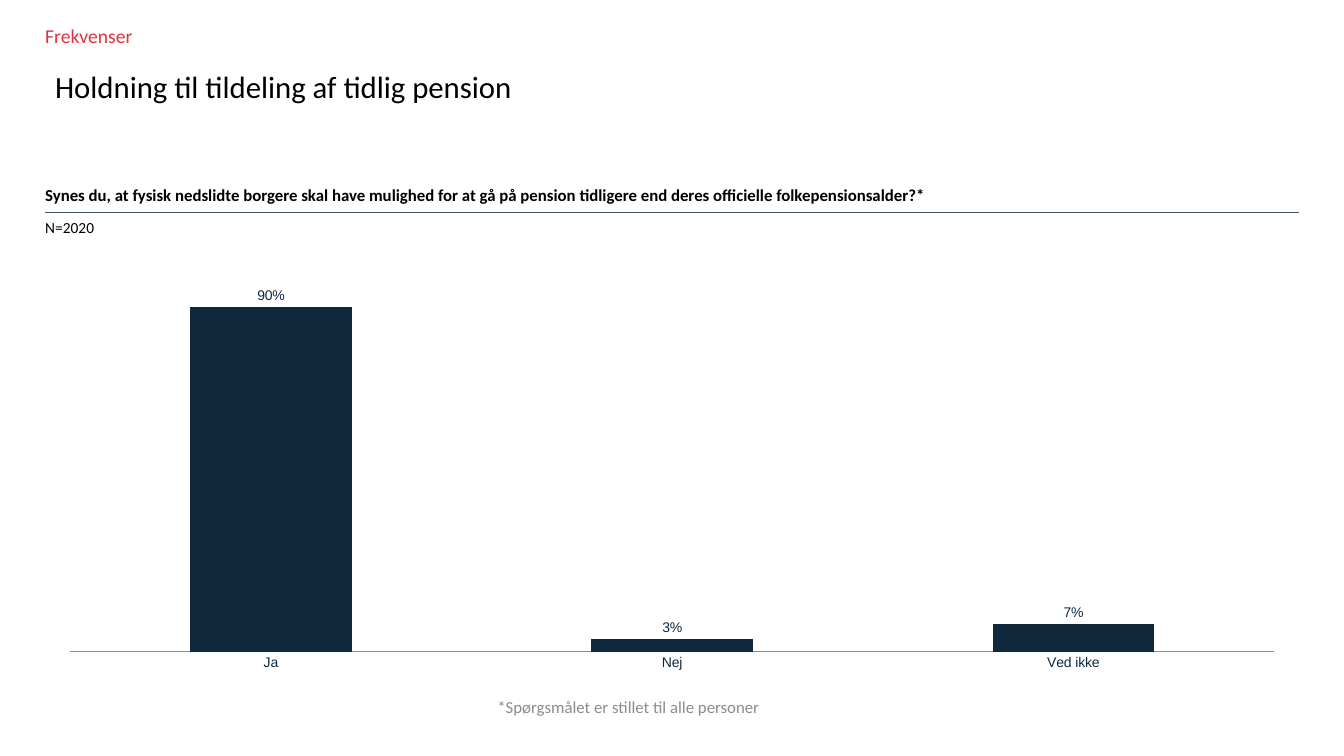
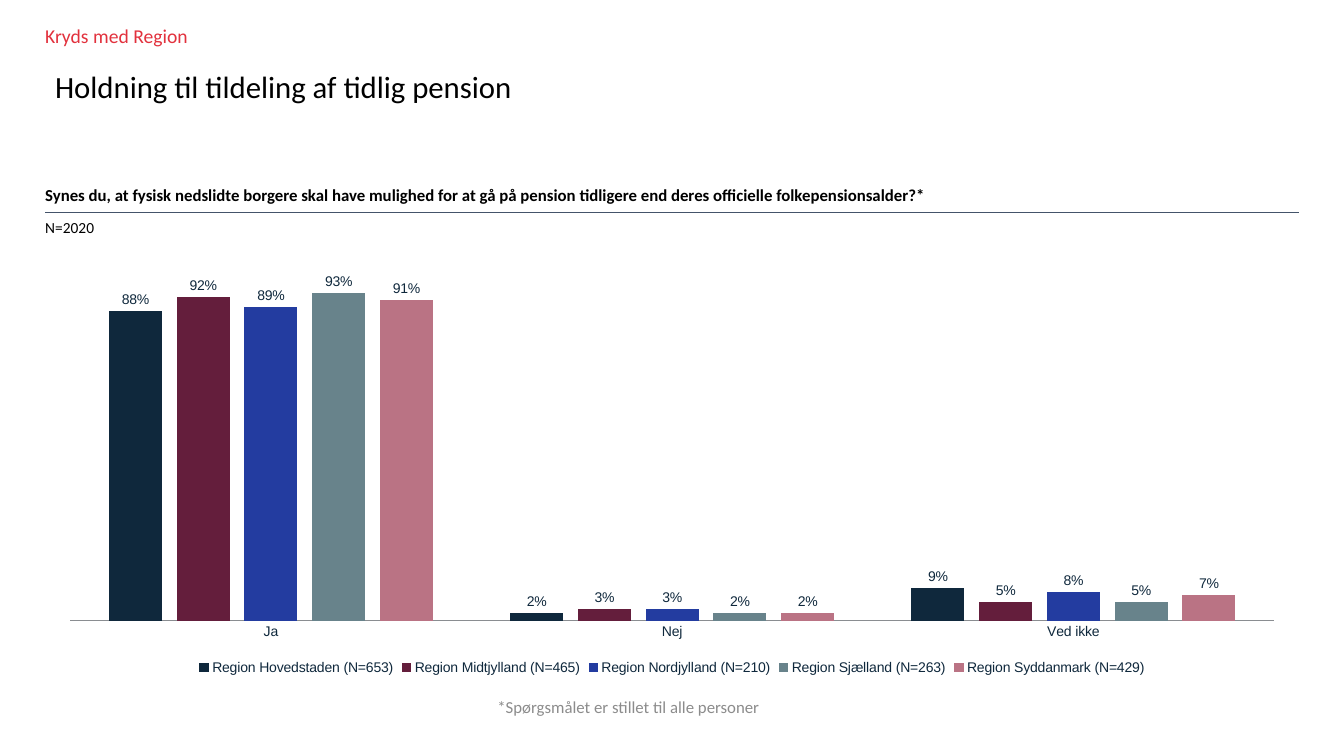
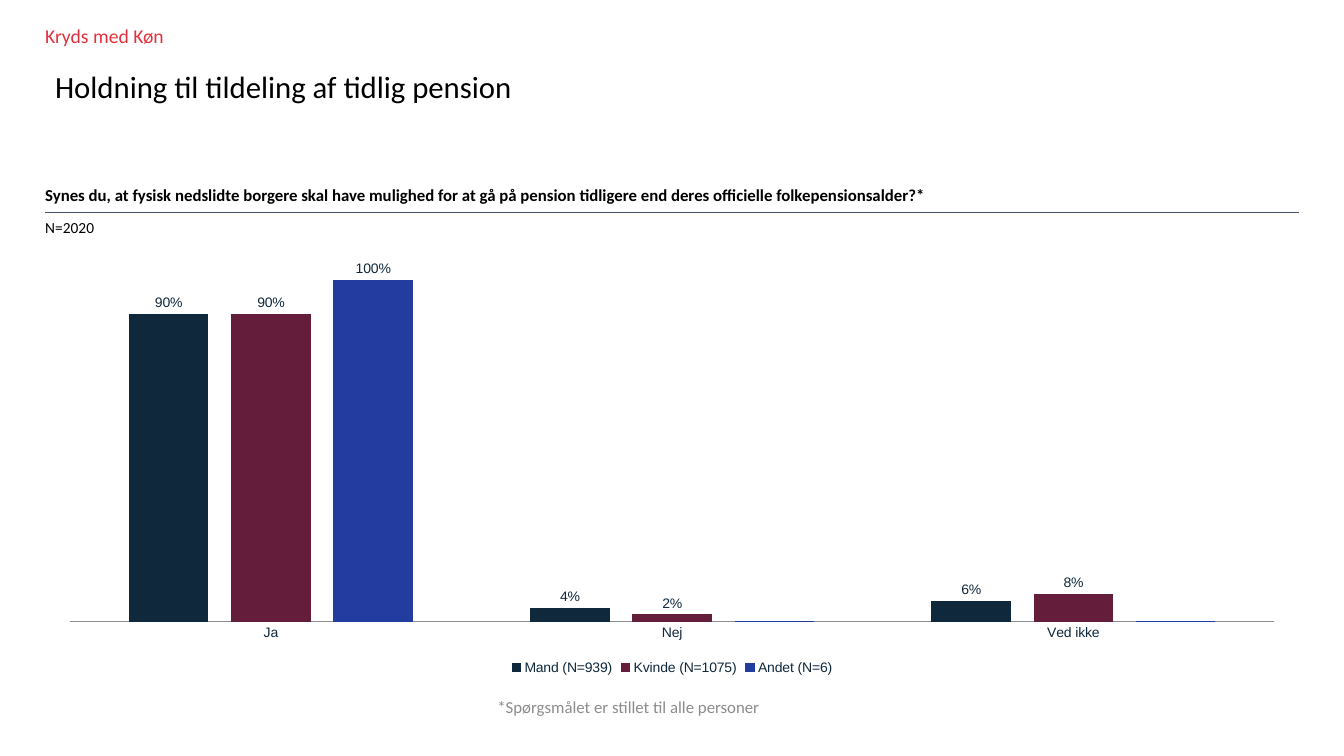
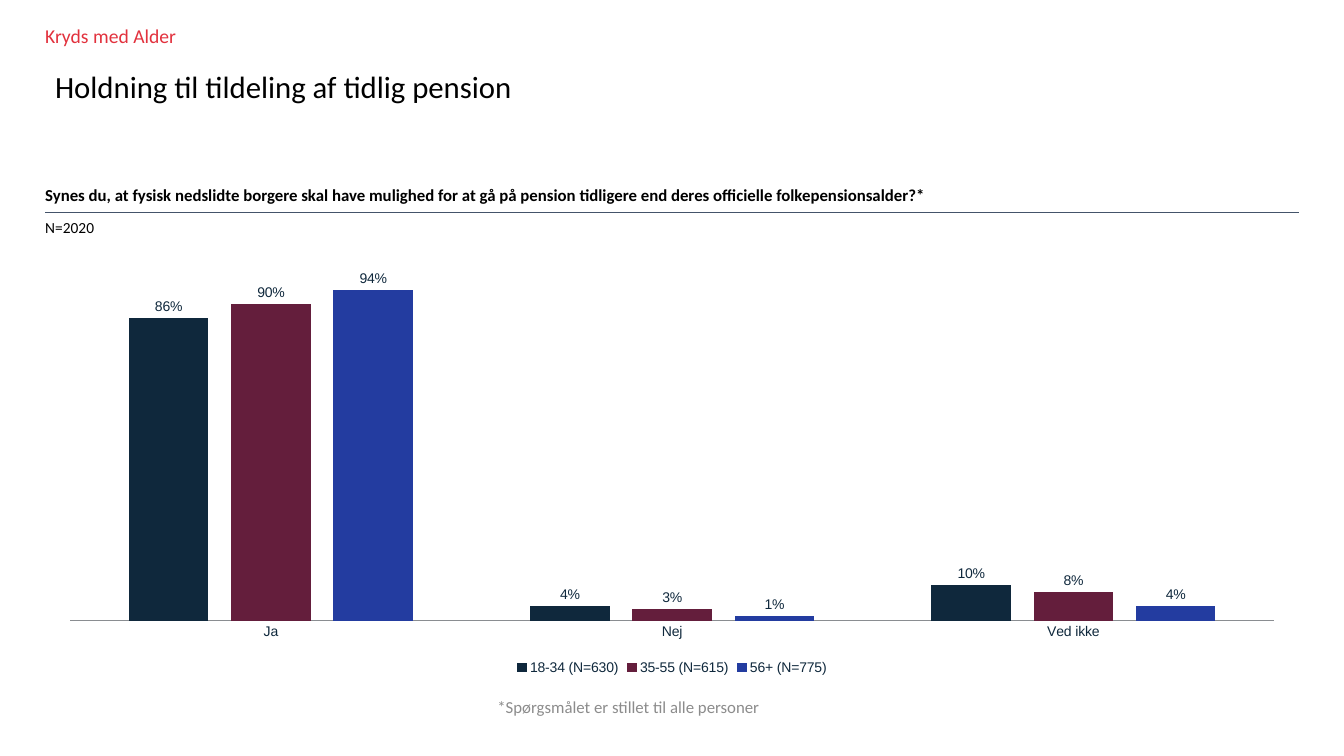
from lxml import etree
from pptx import Presentation
from pptx.chart.data import CategoryChartData
from pptx.dml.color import RGBColor
from pptx.enum.chart import XL_CHART_TYPE, XL_LABEL_POSITION, XL_LEGEND_POSITION, XL_TICK_MARK
from pptx.enum.shapes import MSO_CONNECTOR
from pptx.enum.text import MSO_ANCHOR, PP_ALIGN
from pptx.oxml.ns import qn
from pptx.util import Cm, Pt

COLUMNS = XL_CHART_TYPE.COLUMN_CLUSTERED
OUTSIDE_END = XL_LABEL_POSITION.OUTSIDE_END
LEGEND_BOTTOM = XL_LEGEND_POSITION.BOTTOM
NO_TICK = XL_TICK_MARK.NONE
STRAIGHT = MSO_CONNECTOR.STRAIGHT
TOP, MIDDLE, BOTTOM = MSO_ANCHOR.TOP, MSO_ANCHOR.MIDDLE, MSO_ANCHOR.BOTTOM
LEFT, CENTER = PP_ALIGN.LEFT, PP_ALIGN.CENTER

BLACK = RGBColor(0x00, 0x00, 0x00)
RED = RGBColor(0xE2, 0x31, 0x3D)
GRAY = RGBColor(0x8C, 0x8C, 0x8C)
AXIS_GRAY = RGBColor(0x8A, 0x8D, 0x91)
RULE_BLUE = RGBColor(0x44, 0x54, 0x6A)
NAVY = RGBColor(0x0F, 0x28, 0x3C)
WINE = RGBColor(0x64, 0x1E, 0x3C)
BLUE = RGBColor(0x23, 0x3C, 0xA0)
TEAL = RGBColor(0x68, 0x83, 0x8B)
ROSE = RGBColor(0xBA, 0x73, 0x84)
SERIES_COLORS = [NAVY, WINE, BLUE, TEAL, ROSE]

MARGIN = Cm(1.14)
CONTENT_WIDTH = Cm(31.6)
RULE_TOP = Cm(5.36)
NO_INSETS = (0, 0, 0, 0)
DEFAULT_INSETS = (Cm(0.25), Cm(0.13), Cm(0.25), Cm(0.13))

TITLE = "Holdning til tildeling af tidlig pension"
QUESTION = (
    "Synes du, at fysisk nedslidte borgere skal have mulighed for at gå på pension "
    "tidligere end deres officielle folkepensionsalder?*"
)
SAMPLE = "N=2020"
FOOTNOTE = "*Spørgsmålet er stillet til alle personer"
ANSWERS = ["Ja", "Nej", "Ved ikke"]

SLIDES = [
    ("Frekvenser", [("Series 1", (0.9, 0.03, 0.07))]),
    ("Kryds med Region", [
        ("Region Hovedstaden (N=653)", (0.88, 0.02, 0.09)),
        ("Region Midtjylland (N=465)", (0.92, 0.03, 0.05)),
        ("Region Nordjylland (N=210)", (0.89, 0.03, 0.08)),
        ("Region Sjælland (N=263)", (0.93, 0.02, 0.05)),
        ("Region Syddanmark (N=429)", (0.91, 0.02, 0.07)),
    ]),
    ("Kryds med Køn", [
        ("Mand (N=939)", (0.9, 0.04, 0.06)),
        ("Kvinde (N=1075)", (0.9, 0.02, 0.08)),
        ("Andet (N=6)", (1, 0, 0)),
    ]),
    ("Kryds med Alder", [
        ("18-34 (N=630)", (0.86, 0.04, 0.1)),
        ("35-55 (N=615)", (0.9, 0.03, 0.08)),
        ("56+ (N=775)", (0.94, 0.01, 0.04)),
    ]),
]


def style_font(font, size, color, name="Calibri", bold=False):
    font.name = name
    font.size = Pt(size)
    font.color.rgb = color
    font.bold = bold


def add_text(slide, text, box, size, color, insets=NO_INSETS, anchor=TOP,
             align=LEFT, spacing=0.9, bold=False):
    frame = slide.shapes.add_textbox(*box).text_frame
    frame.word_wrap = True
    frame.vertical_anchor = anchor
    frame.margin_left, frame.margin_top, frame.margin_right, frame.margin_bottom = insets
    paragraph = frame.paragraphs[0]
    paragraph.alignment = align
    paragraph.line_spacing = spacing
    run = paragraph.add_run()
    run.text = text
    style_font(run.font, size, color, bold=bold)


presentation = Presentation()
presentation.slide_width = Cm(33.87)
presentation.slide_height = Cm(19.05)
blank_layout = presentation.slide_layouts[6]

for heading, answer_series in SLIDES:
    slide = presentation.slides.add_slide(blank_layout)

    rule = slide.shapes.add_connector(
        STRAIGHT, MARGIN, RULE_TOP, MARGIN + CONTENT_WIDTH, RULE_TOP)
    rule.line.color.rgb = RULE_BLUE
    rule.line.width = Pt(1)
    etree.SubElement(rule._element.spPr, qn("a:effectLst"))

    chart_data = CategoryChartData(number_format="0%")
    chart_data.categories = ANSWERS
    for name, values in answer_series:
        chart_data.add_series(name, values)
    chart = slide.shapes.add_chart(
        COLUMNS, MARGIN, Cm(6.58), CONTENT_WIDTH, Cm(10.54), chart_data).chart
    style_font(chart.font, 18, BLACK)
    chart.has_title = False
    chart.has_legend = len(answer_series) > 1
    if chart.has_legend:
        chart.legend.position = LEGEND_BOTTOM
        chart.legend.include_in_layout = False
        style_font(chart.legend.font, 10, NAVY, "Arial")

    category_axis = chart.category_axis
    category_axis.major_tick_mark = NO_TICK
    category_axis.format.line.color.rgb = AXIS_GRAY
    category_axis.format.line.width = Pt(0.5)
    style_font(category_axis.tick_labels.font, 10, NAVY, "Arial")
    value_axis = chart.value_axis
    value_axis.minimum_scale = 0
    value_axis.maximum_scale = 1
    value_axis.major_unit = 0.1
    value_axis.has_major_gridlines = False
    value_axis.visible = False

    plot = chart.plots[0]
    plot.gap_width = 150
    plot.overlap = -30
    plot.vary_by_categories = False
    for series, color in zip(plot.series, SERIES_COLORS):
        series.format.fill.solid()
        series.format.fill.fore_color.rgb = color
        series.format.line.color.rgb = color
        series.format.line.width = Pt(0)
        labels = series.data_labels
        labels.show_value = True
        labels.position = OUTSIDE_END
        labels.number_format = "0%;;" if 0 in series.values else "0%"
        labels.number_format_is_linked = False
        style_font(labels.font, 10, NAVY, "Arial")

    add_text(slide, heading, (MARGIN, Cm(0.66), CONTENT_WIDTH, Cm(0.7)), 14, RED)
    add_text(slide, TITLE, (MARGIN, Cm(1.35), CONTENT_WIDTH, Cm(1.78)), 22, BLACK,
             insets=DEFAULT_INSETS, anchor=MIDDLE)
    add_text(slide, QUESTION, (MARGIN, Cm(4.06), CONTENT_WIDTH, Cm(1.3)), 12, BLACK,
             insets=(0, 0, 0, Cm(0.2)), anchor=BOTTOM, bold=True)
    add_text(slide, SAMPLE, (MARGIN, Cm(5.56), Cm(2), Cm(0.4)), 11, BLACK)
    add_text(slide, FOOTNOTE, (Cm(2.62), Cm(17.25), Cm(26.44), Cm(1.12)), 12, GRAY,
             insets=DEFAULT_INSETS, anchor=MIDDLE, align=CENTER, spacing=1.0)

presentation.save("out.pptx")
